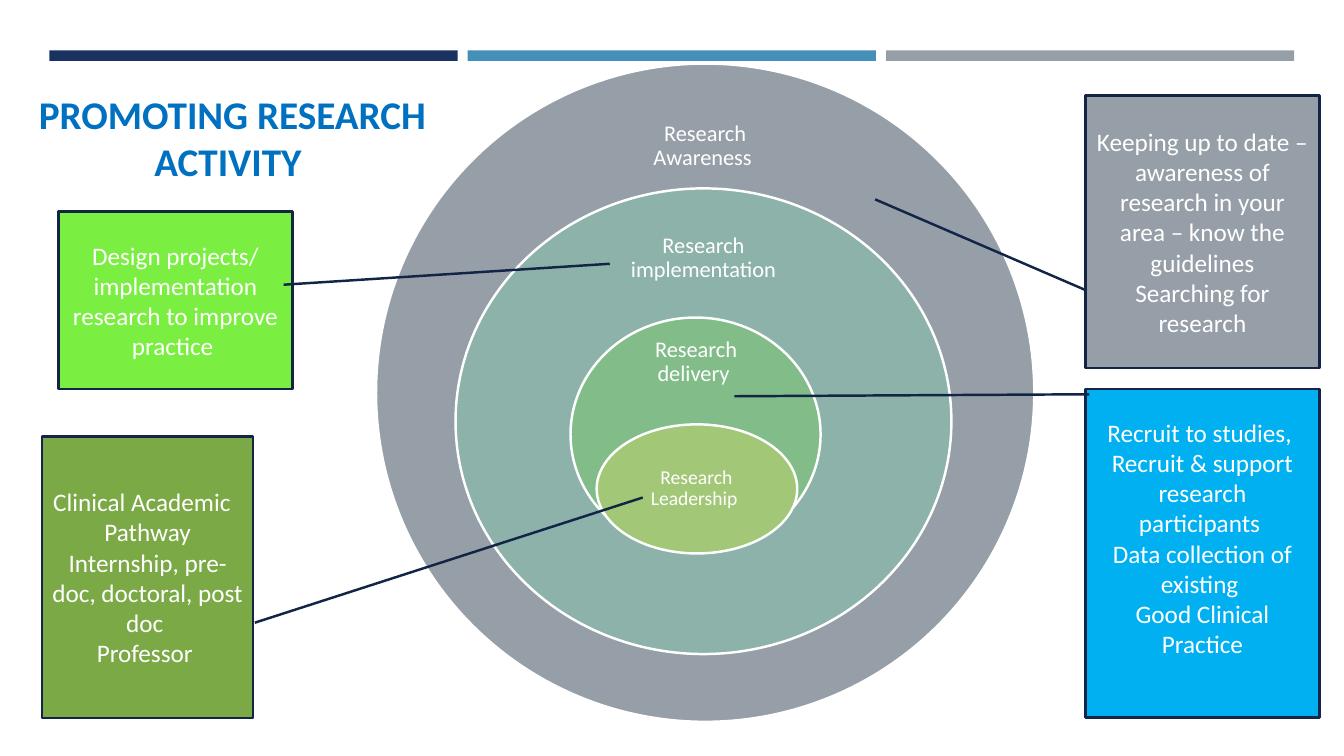
from dataclasses import dataclass

from pptx import Presentation
from pptx import util as u
from pptx.dml.color import RGBColor
from pptx.enum import shapes, text

Pt = u.Pt


@dataclass(frozen=True)
class Theme:
    font: str = "Calibri"
    white: str = "FFFFFF"
    title: str = "0070C0"
    outline: str = "132547"
    navy: str = "1A3260"
    blue: str = "4590B8"
    grey: str = "969FA7"
    teal: str = "8CB2AA"
    green: str = "81BC89"
    olive: str = "A2C777"
    lime: str = "7BEE42"
    sky: str = "00B0F0"
    moss: str = "7BA946"
    title_size: int = 28
    body_size: int = 18
    label_size: int = 16
    small_size: int = 14
    line_width: float = 1.75


THEME = Theme()

# Fill, left, top, width, height, label, label size, label frame, label inset
RINGS = [
    (THEME.grey, 268.6, 45.4, 470.2, 470.2, "Research Awareness ",
     THEME.label_size, (437.8, 69.1, 131.8, 70.6), 8.6),
    (THEME.teal, 325.4, 134.6, 354.2, 332.6, "Research implementation ",
     THEME.label_size, (440.6, 154.8, 123.8, 59.8), 8.6),
    (THEME.green, 407.5, 226.8, 178.6, 167, "Research delivery ",
     THEME.label_size, (455.8, 239.8, 82.8, 37.4), 8.6),
    (THEME.olive, 426.2, 303.1, 143.3, 92.2, "Research Leadership ",
     THEME.small_size, (447.1, 326.2, 100.8, 46.1), 7.9),
]

# Fill, frame, pointer (start y, start x, end y, end x), bottom inset, paragraphs
CALLOUTS = [
    (THEME.grey, (775.4, 68.4, 167, 194.4), (0.716, 0.005, 0.381, -0.9), 3.6,
     ["Keeping up to date – awareness of research in your area – know the guidelines",
      "Searching for research"]),
    (THEME.lime, (41.8, 151.2, 167, 126.7), (0.412, 0.963, 0.294, 2.358), 3.6,
     ["Design projects/ implementation research to improve practice "]),
    (THEME.sky, (775.4, 277.9, 167, 234.7), (0.016, 0.016, 0.022, -1.502), 25.6,
     ["Recruit to studies, ", "Recruit & support research participants ",
      "Data collection of existing ", "Good Clinical Practice"]),
    (THEME.moss, (30.2, 311.8, 150.5, 200.9), (0.217, 2.85, 0.662, 1.009), 3.6,
     ["Clinical Academic  ",
      "Pathway Internship, pre-doc, doctoral, post doc ", "Professor "]),
]


def set_all(target, values):
    for name, value in values.items():
        setattr(target, name, value)


def points(frame):
    return [Pt(value) for value in frame]


def write(frame, lines, size, color=THEME.white, bold=False, spacing=1.0,
          anchor=text.MSO_ANCHOR.MIDDLE, **margins):
    set_all(frame, {"word_wrap": True, "auto_size": text.MSO_AUTO_SIZE.NONE,
                    "vertical_anchor": anchor})
    set_all(frame, {f"margin_{side}": Pt(inset) for side, inset in margins.items()})
    for index, line in enumerate(lines):
        para = frame.add_paragraph() if index else frame.paragraphs[0]
        set_all(para, {"alignment": text.PP_ALIGN.CENTER, "line_spacing": spacing,
                       "space_before": Pt(0)})
        span = para.add_run()
        span.text = line
        set_all(span.font, {"name": THEME.font, "size": Pt(size), "bold": bold})
        span.font.color.rgb = RGBColor.from_string(color)


def add_filled(page, kind, frame, fill, line=None):
    shape = page.shapes.add_shape(kind, *points(frame))
    shape.shadow.inherit = False
    shape.fill.solid()
    shape.fill.fore_color.rgb = RGBColor.from_string(fill)
    if line:
        shape.line.color.rgb = RGBColor.from_string(line)
        shape.line.width = Pt(THEME.line_width)
    else:
        shape.line.fill.background()
    return shape


def add_title(page, words):
    title = page.shapes.title
    set_all(title, {"left": Pt(-3.6), "top": Pt(54.7),
                    "width": Pt(339.1), "height": Pt(80.6)})
    write(title.text_frame, [words], THEME.title_size, THEME.title, bold=True,
          anchor=text.MSO_ANCHOR.BOTTOM)


def add_bars(page):
    for index, fill in enumerate((THEME.navy, THEME.blue, THEME.grey)):
        frame = (35.3 + index * 298.8, 36, 291.6, 7.5)
        add_filled(page, shapes.MSO_SHAPE.RECTANGLE, frame, fill)


def add_ring(page, fill, left, top, width, height, label, size, label_frame, inset):
    add_filled(page, shapes.MSO_SHAPE.OVAL, (left, top, width, height), fill, THEME.white)
    box = page.shapes.add_textbox(*points(label_frame))
    write(box.text_frame, [label], size, spacing=0.9,
          left=inset, top=inset, right=inset, bottom=inset)


def add_callout(page, fill, frame, pointer, bottom, lines):
    box = add_filled(page, shapes.MSO_SHAPE.LINE_CALLOUT_1, frame, fill, THEME.outline)
    for index, value in enumerate(pointer):
        box.adjustments[index] = value
    write(box.text_frame, lines, THEME.body_size, bottom=bottom)


def main():
    deck = Presentation()
    set_all(deck, {"slide_width": Pt(960), "slide_height": Pt(540)})
    page = deck.slides.add_slide(deck.slide_layouts.get_by_name("Title Only"))

    # Heading and the bars above it
    add_title(page, "PROMOTING RESEARCH ACTIVITY ")
    add_bars(page)

    # Nested levels of research, outermost first
    for ring in RINGS:
        add_ring(page, *ring)

    # Explanations pointing at each level
    for callout in CALLOUTS:
        add_callout(page, *callout)

    deck.save("out.pptx")


if __name__ == "__main__":
    main()
